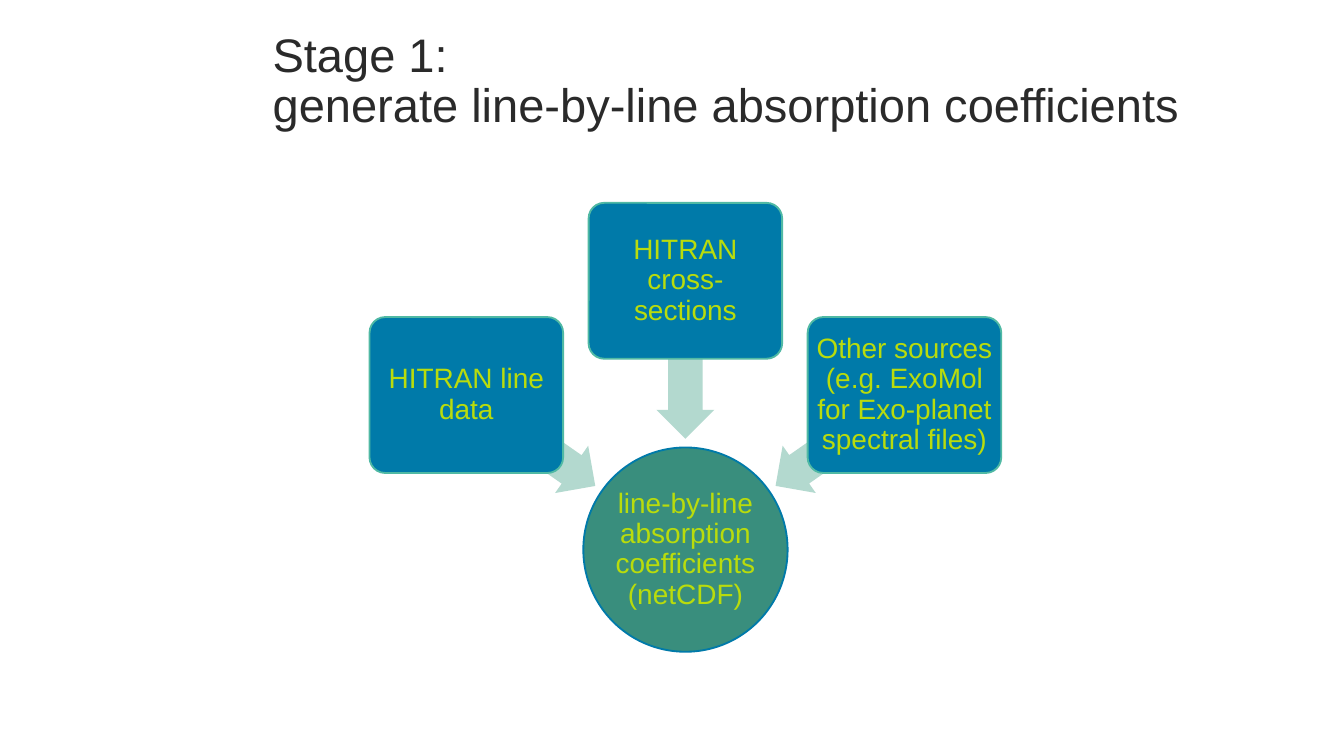
from pptx import Presentation
from pptx.dml.color import RGBColor
from pptx.enum.shapes import MSO_SHAPE
from pptx.enum.text import MSO_ANCHOR, PP_ALIGN
from pptx.util import Inches, Pt

ELLIPSE = MSO_SHAPE.OVAL
ROUNDED = MSO_SHAPE.ROUNDED_RECTANGLE
LEFT_ARROW = MSO_SHAPE.LEFT_ARROW
MIDDLE, BOTTOM = MSO_ANCHOR.MIDDLE, MSO_ANCHOR.BOTTOM
LEFT, CENTER = PP_ALIGN.LEFT, PP_ALIGN.CENTER

FONT = "Arial"
BLUE, GREEN, MINT, TEAL = "007AA9", "398E7D", "B3D9CF", "50B9A4"
LIME, DARK = "B9DC0C", "2A2A2A"

SLIDE_W = 10
SLIDE_H = SLIDE_W * 9 / 16
CENTER_X = 5.1
BOX_W, BOX_H = 1.44, 1.16
ARROW_W, ARROW_H = 1.17, 0.43
CIRCLE_D = 1.52
BOX_STEP, ARROW_STEP = 1.63, 1.15

# text, column, box centre y, arrow centre y, arrow rotation
SOURCES = [
    ("HITRAN line data", -1, 2.94, 3.28, 215),
    ("HITRAN cross-sections", 0, 2.09, 2.68, 270),
    ("Other sources (e.g. ExoMol for Exo-planet spectral files)", 1, 2.94, 3.28, 325),
]


def rgb(hex_color):
    return RGBColor.from_string(hex_color)


def write(shape, text, size, color, align, anchor):
    tf = shape.text_frame
    tf.word_wrap = True
    tf.vertical_anchor = anchor
    p = tf.paragraphs[0]
    p.text = text
    p.alignment = align
    p.line_spacing = 0.9
    for r in p.runs:
        r.font.name = FONT
        r.font.size = Pt(size)
        r.font.color.rgb = rgb(color)


def add_title(slide, text):
    box = slide.shapes.add_textbox(Inches(1.93), Inches(0.27), Inches(7.91), Inches(0.77))
    write(box, text, 25.2, DARK, LEFT, BOTTOM)


def add_centred_shape(slide, kind, x, y, w, h, fill, line=None):
    """Add a shape whose centre is at (x, y)."""
    sp = slide.shapes.add_shape(
        kind, Inches(x - w / 2), Inches(y - h / 2), Inches(w), Inches(h))
    sp.shadow.inherit = False
    sp.fill.solid()
    sp.fill.fore_color.rgb = rgb(fill)
    if line:
        sp.line.color.rgb = rgb(line)
        sp.line.width = Pt(1)
    else:
        sp.line.fill.background()
    return sp


def add_label(sp, text, inset):
    tf = sp.text_frame
    tf.margin_left = tf.margin_right = Inches(inset)
    tf.margin_top = tf.margin_bottom = Inches(inset)
    write(sp, text, 15, LIME, CENTER, MIDDLE)


def add_result(slide, text):
    sp = add_centred_shape(slide, ELLIPSE, CENTER_X, 4.09, CIRCLE_D, CIRCLE_D, GREEN, BLUE)
    add_label(sp, text, 0.01)


def add_arrow(slide, x, y, rotation):
    sp = add_centred_shape(slide, LEFT_ARROW, x, y, ARROW_W, ARROW_H, MINT)
    sp.adjustments[0] = 0.6
    sp.adjustments[1] = 0.5
    sp.rotation = rotation


def add_source(slide, text, x, y):
    sp = add_centred_shape(slide, ROUNDED, x, y, BOX_W, BOX_H, BLUE, TEAL)
    sp.adjustments[0] = 0.1
    add_label(sp, text, 0.03)


def main():
    prs = Presentation()
    prs.slide_width, prs.slide_height = Inches(SLIDE_W), Inches(SLIDE_H)
    slide = prs.slides.add_slide(prs.slide_layouts[6])

    add_title(slide, "Stage 1:\ngenerate line-by-line absorption coefficients")
    add_result(slide, "line-by-line absorption coefficients (netCDF)")
    for text, column, box_y, arrow_y, rotation in SOURCES:
        add_arrow(slide, CENTER_X + column * ARROW_STEP, arrow_y, rotation)
        add_source(slide, text, CENTER_X + column * BOX_STEP, box_y)

    prs.save("out.pptx")


if __name__ == "__main__":
    main()
